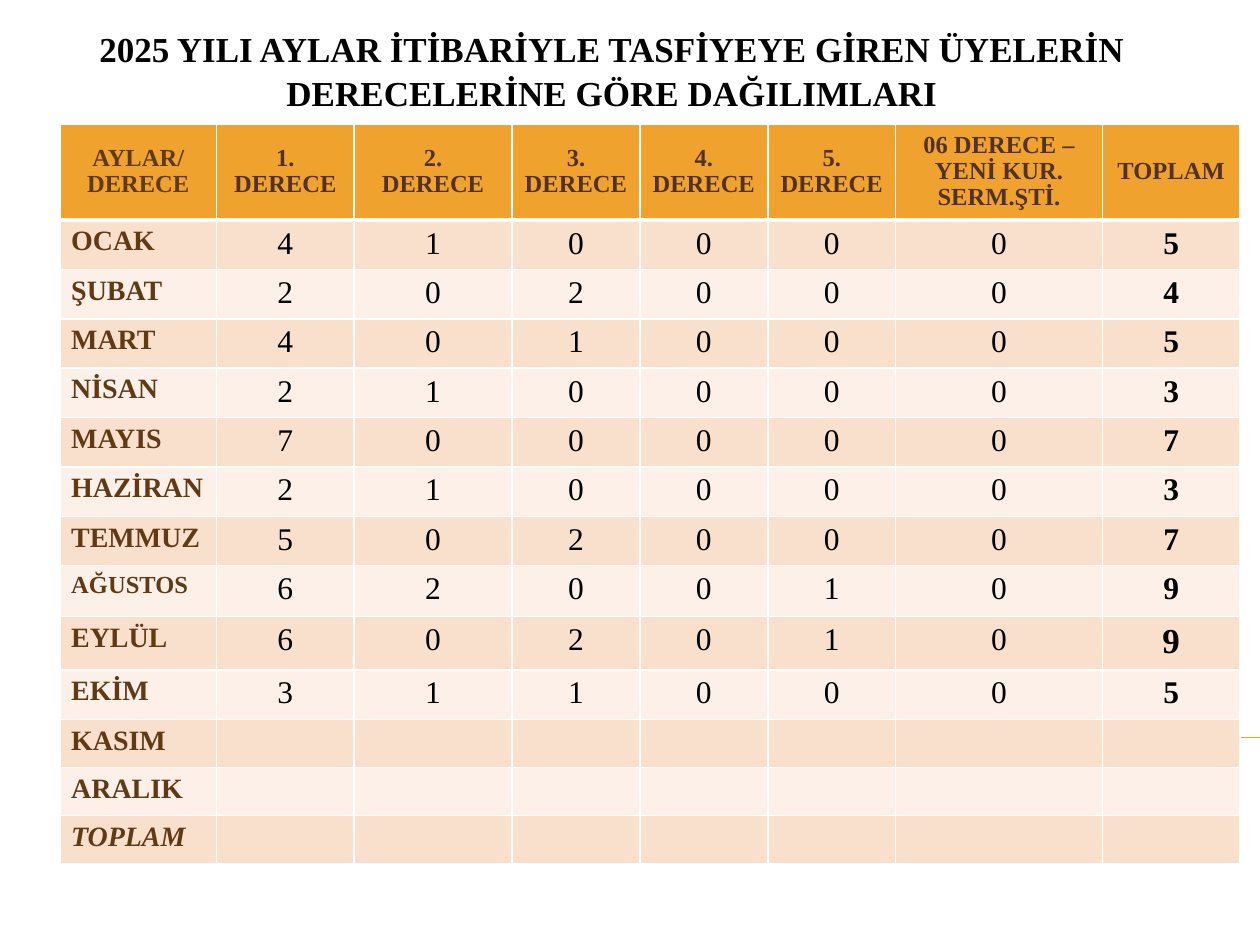
"""Build a slide with a monthly table of members in liquidation by degree."""
import pptx
import pptx.dml.color
import pptx.enum.shapes
import pptx.enum.text
import pptx.oxml.ns
import pptx.util
from lxml import etree

Pt = pptx.util.Pt
ALIGN = pptx.enum.text.PP_ALIGN
ANCHOR = pptx.enum.text.MSO_ANCHOR
qn = pptx.oxml.ns.qn

TITLE = "2025 YILI AYLAR İTİBARİYLE TASFİYEYE GİREN ÜYELERİN DERECELERİNE GÖRE DAĞILIMLARI"
HEADERS = ["AYLAR/ DERECE", "1.\nDERECE", "2.\vDERECE", "3. DERECE", "4. DERECE",
           "5. DERECE", "06 DERECE – YENİ KUR. SERM.ŞTİ.", "TOPLAM"]
MONTHS = [
    ("OCAK", 4, 1, 0, 0, 0, 0, 5),
    ("ŞUBAT", 2, 0, 2, 0, 0, 0, 4),
    ("MART", 4, 0, 1, 0, 0, 0, 5),
    ("NİSAN", 2, 1, 0, 0, 0, 0, 3),
    ("MAYIS", 7, 0, 0, 0, 0, 0, 7),
    ("HAZİRAN", 2, 1, 0, 0, 0, 0, 3),
    ("TEMMUZ", 5, 0, 2, 0, 0, 0, 7),
    ("AĞUSTOS", 6, 2, 0, 0, 1, 0, 9),
    ("EYLÜL", 6, 0, 2, 0, 1, 0, 9),
    ("EKİM", 3, 1, 1, 0, 0, 0, 5),
    ("KASIM",), ("ARALIK",), ("TOPLAM",),
]
COL_WIDTHS = [89.6, 78.6, 90.2, 73.1, 73.1, 73.1, 118.2, 78.5]
HEADER_HEIGHT, ROW_HEIGHT = 54.5, 27.55
TALL_ROWS = {"AĞUSTOS": 29, "EYLÜL": 29.8}
SIZES = {("AĞUSTOS", 0): 14, ("EYLÜL", 7): 20}
LEFT, TOP = 34.2, 70.8
ORANGE, BROWN, DARK, BLACK, WHITE = "F0A22E", "603A14", "523227", "000000", "FFFFFF"
BANDS = ["F9E0CD", "FCF0E8"]


def rgb(value):
    return pptx.dml.color.RGBColor.from_string(value)


def write(tf, text, size, color, align=ALIGN.CENTER, spacing=1.0, **fmt):
    tf.text = text
    for p in tf.paragraphs:
        p.alignment = align
        p.line_spacing = spacing
        for r in p.runs:
            for name, value in dict(name="Times New Roman", size=Pt(size), **fmt).items():
                setattr(r.font, name, value)
            r.font.color.rgb = rgb(color)


def style_cell(cell, fill, widths):
    for name in ("margin_left", "margin_right"):
        setattr(cell, name, Pt(6.5))
    for name in ("margin_top", "margin_bottom"):
        setattr(cell, name, Pt(3.3))
    tc_pr = cell._tc.get_or_add_tcPr()
    for side in "LRTB":
        ln = etree.SubElement(tc_pr, qn(f"a:ln{side}"), w=str(Pt(widths.get(side, 1))))
        solid = etree.SubElement(ln, qn("a:solidFill"))
        etree.SubElement(solid, qn("a:srgbClr"), val=WHITE)
    cell.fill.solid()
    cell.fill.fore_color.rgb = rgb(fill)


def add_rule(s):
    line = s.shapes.add_connector(pptx.enum.shapes.MSO_CONNECTOR.STRAIGHT,
                                  Pt(40), Pt(421.4), Pt(720), Pt(421.4))
    line.line.color.rgb = rgb(ORANGE)
    line.line.width = Pt(0.75)
    etree.SubElement(line._element.spPr, qn("a:effectLst"))


def add_title(s):
    tf = s.shapes.add_textbox(Pt(16.6), Pt(11.5), Pt(666), Pt(45.4)).text_frame
    tf.word_wrap = True
    write(tf, TITLE, 20, BLACK, spacing=1.04, bold=True)


def add_month_table(s):
    heights = [HEADER_HEIGHT] + [TALL_ROWS.get(m[0], ROW_HEIGHT) for m in MONTHS]
    table = s.shapes.add_table(len(heights), len(HEADERS), Pt(LEFT), Pt(TOP),
                               Pt(sum(COL_WIDTHS)), Pt(sum(heights))).table
    for column, width in zip(table.columns, COL_WIDTHS):
        column.width = Pt(width)
    for row, height in zip(table.rows, heights):
        row.height = Pt(height)
    for c, text in enumerate(HEADERS):
        cell = table.cell(0, c)
        style_cell(cell, ORANGE, {"B": 3})
        cell.vertical_anchor = ANCHOR.MIDDLE
        write(cell.text_frame, text, 14, DARK if c else BROWN, spacing=0.96, bold=True)
    last = len(HEADERS) - 1
    for i, (month, *values) in enumerate(MONTHS):
        for c in range(len(HEADERS)):
            cell = table.cell(i + 1, c)
            style_cell(cell, BANDS[i % 2], {} if i else {"T": 3})
            if c == 0:
                write(cell.text_frame, month, SIZES.get((month, c), 16), BROWN, ALIGN.LEFT,
                      bold=True, italic=month == "TOPLAM")
            elif values:
                write(cell.text_frame, str(values[c - 1]), SIZES.get((month, c), 18), BLACK,
                      bold=c == last)
            else:
                p = cell.text_frame.paragraphs[0]
                etree.SubElement(p._p, qn("a:endParaRPr"), sz="1400")


def main():
    prs = pptx.Presentation()
    prs.slide_width, prs.slide_height = Pt(720), Pt(540)
    s = prs.slides.add_slide(prs.slide_layouts[6])
    add_rule(s)
    add_title(s)
    add_month_table(s)
    prs.save("out.pptx")


if __name__ == "__main__":
    main()
